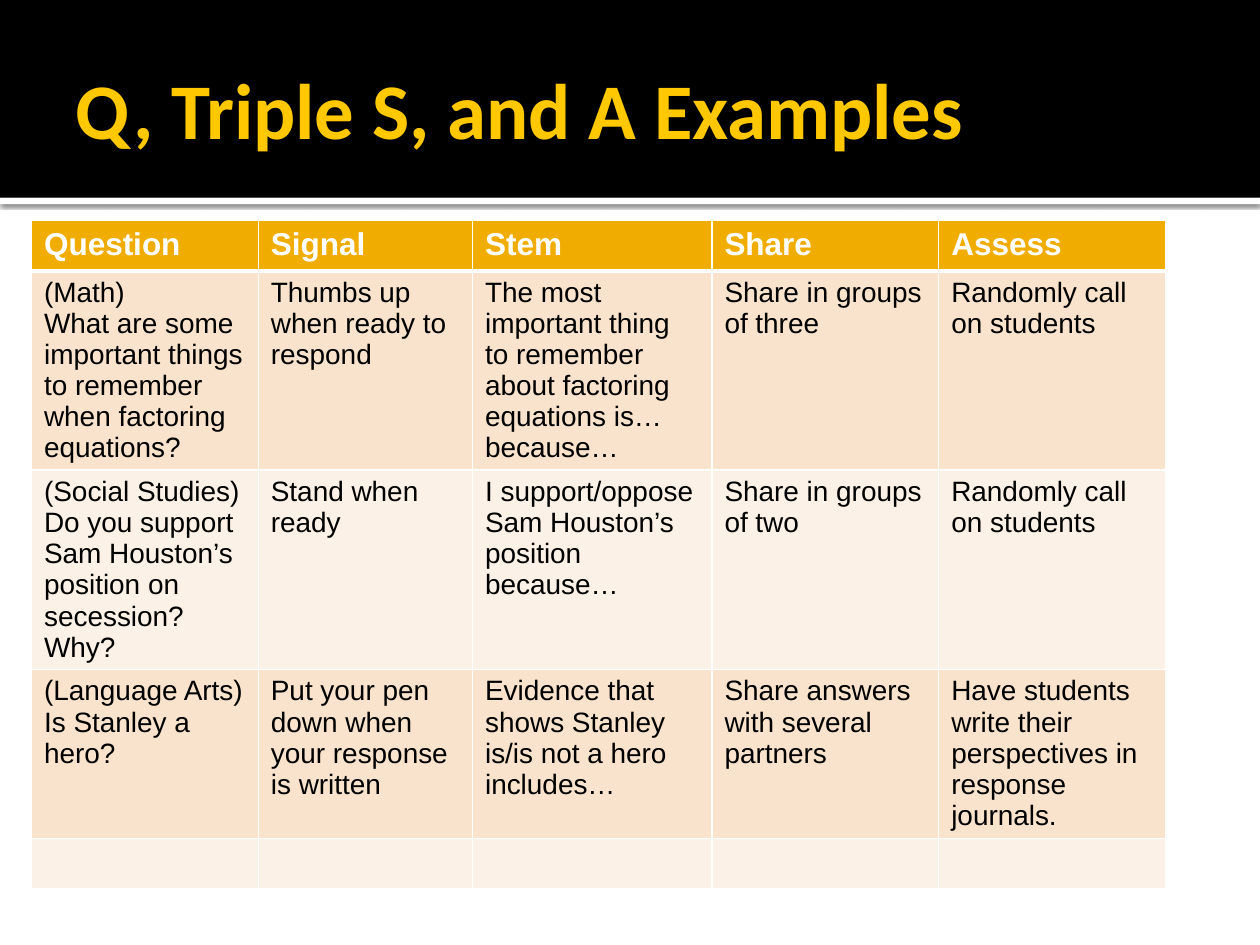
"""Build a slide with a table of question, signal, stem, share and assess examples."""
from typing import NamedTuple

from lxml.etree import SubElement
from pptx import Presentation
from pptx.dml.color import RGBColor
from pptx.enum.shapes import MSO_SHAPE as Shape
from pptx.enum.text import MSO_ANCHOR as Anchor, MSO_AUTO_SIZE as AutoSize, PP_ALIGN as Align
from pptx.oxml import parse_xml
from pptx.oxml.ns import nsdecls, qn
from pptx.util import Inches, Pt

BLACK = RGBColor(0x00, 0x00, 0x00)
WHITE = RGBColor(0xFF, 0xFF, 0xFF)
YELLOW = RGBColor(0xFF, 0xC8, 0x00)
AMBER = RGBColor(0xF0, 0xAD, 0x00)
PEACH = RGBColor(0xF9, 0xE3, 0xCC)
CREAM = RGBColor(0xFC, 0xF1, 0xE7)

TITLE = "Q, Triple S, and A Examples"
COLUMN_WIDTHS = (1.8, 1.7, 1.9, 1.8, 1.8)


class Row(NamedTuple):
    height: float
    texts: tuple[str, ...]


class Band(NamedTuple):
    top: float
    height: float
    color: RGBColor
    shadow: bool


BANDS = (Band(1.57, 0.05, WHITE, True), Band(0, 1.57, BLACK, False))

ROWS = (
    Row(0.4, ("Question", "Signal", "Stem", "Share", "Assess")),
    Row(1.58, (
        "(Math)\nWhat are some important things to remember when factoring equations?",
        "Thumbs up when ready to respond",
        "The most important thing to remember about factoring equations is…because…",
        "Share in groups of three",
        "Randomly call on students",
    )),
    Row(1.58, (
        "(Social Studies)\nDo you support Sam Houston’s position on secession? Why?",
        "Stand when ready",
        "I support/oppose Sam Houston’s position because…",
        "Share in groups of two",
        "Randomly call on students",
    )),
    Row(1.34, (
        "(Language Arts)\nIs Stanley a hero?",
        "Put your pen down when your response is written",
        "Evidence that shows Stanley is/is not a hero includes…",
        "Share answers with several partners",
        "Have students write their perspectives in response journals.",
    )),
    Row(0.4, ("",) * len(COLUMN_WIDTHS)),
)


def write_text(frame, text: str, *, size: float, color: RGBColor, font: str = "Arial",
               bold: bool = False) -> None:
    frame.text = text
    for paragraph in frame.paragraphs:
        paragraph.alignment = Align.LEFT
        paragraph.font.size = Pt(size)
        for run in paragraph.runs:
            run.font.name = font
            run.font.size = Pt(size)
            run.font.bold = bold
            run.font.color.rgb = color


def add_band(slide, band: Band) -> None:
    shape = slide.shapes.add_shape(
        Shape.RECTANGLE, 0, Inches(band.top), Inches(10), Inches(band.height))
    shape.fill.solid()
    shape.fill.fore_color.rgb = band.color
    shape.line.fill.background()
    shape.shadow.inherit = False
    if band.shadow:
        effects = shape.element.spPr.find(qn("a:effectLst"))
        shadow = SubElement(effects, qn("a:outerShdw"), blurRad=str(Pt(2.5)),
                            dist=str(Pt(0.8)), dir="5400000", algn="t", rotWithShape="0")
        color = SubElement(shadow, qn("a:srgbClr"), val=str(BLACK))
        SubElement(color, qn("a:alpha"), val="60000")


def set_borders(cell, *, top: float, bottom: float) -> None:
    properties = cell._tc.get_or_add_tcPr()
    widths = {"lnL": 1, "lnR": 1, "lnT": top, "lnB": bottom}
    for index, (side, width) in enumerate(widths.items()):
        properties.insert(index, parse_xml(
            f'<a:{side} {nsdecls("a")} w="{Pt(width)}"><a:solidFill>'
            f'<a:srgbClr val="{WHITE}"/></a:solidFill></a:{side}>'))


def add_title(slide) -> None:
    title = slide.shapes.title
    title.left, title.top = Inches(0.5), Inches(0.17)
    title.width, title.height = Inches(9), Inches(1.37)
    frame = title.text_frame
    write_text(frame, TITLE, size=45, color=YELLOW, font="Calibri", bold=True)
    frame.auto_size = AutoSize.NONE
    frame.word_wrap = True
    frame.vertical_anchor = Anchor.MIDDLE
    frame.margin_left = Inches(0.1)
    frame.margin_right = frame.margin_top = frame.margin_bottom = Inches(0.05)
    title.element.getparent().append(title.element)


def add_examples(slide) -> None:
    table = slide.shapes.add_table(
        len(ROWS), len(COLUMN_WIDTHS), Inches(0.25), Inches(1.75),
        Inches(sum(COLUMN_WIDTHS)), Inches(sum(row.height for row in ROWS))).table
    for column, width in zip(table.columns, COLUMN_WIDTHS):
        column.width = Inches(width)
    for row_index, row in enumerate(ROWS):
        table.rows[row_index].height = Inches(row.height)
        header = row_index == 0
        fill = AMBER if header else PEACH if row_index % 2 else CREAM
        for column_index, text in enumerate(row.texts):
            cell = table.cell(row_index, column_index)
            write_text(cell.text_frame, text, size=18 if header else 16,
                       color=WHITE if header else BLACK, bold=header)
            cell.fill.solid()
            cell.fill.fore_color.rgb = fill
            set_borders(cell, top=3 if row_index == 1 else 1, bottom=3 if header else 1)


def main() -> None:
    presentation = Presentation()
    presentation.slide_width, presentation.slide_height = Inches(10), Inches(7.5)
    slide = presentation.slides.add_slide(presentation.slide_layouts[5])
    for band in BANDS:
        add_band(slide, band)
    add_title(slide)
    add_examples(slide)
    presentation.save("out.pptx")


if __name__ == "__main__":
    main()
